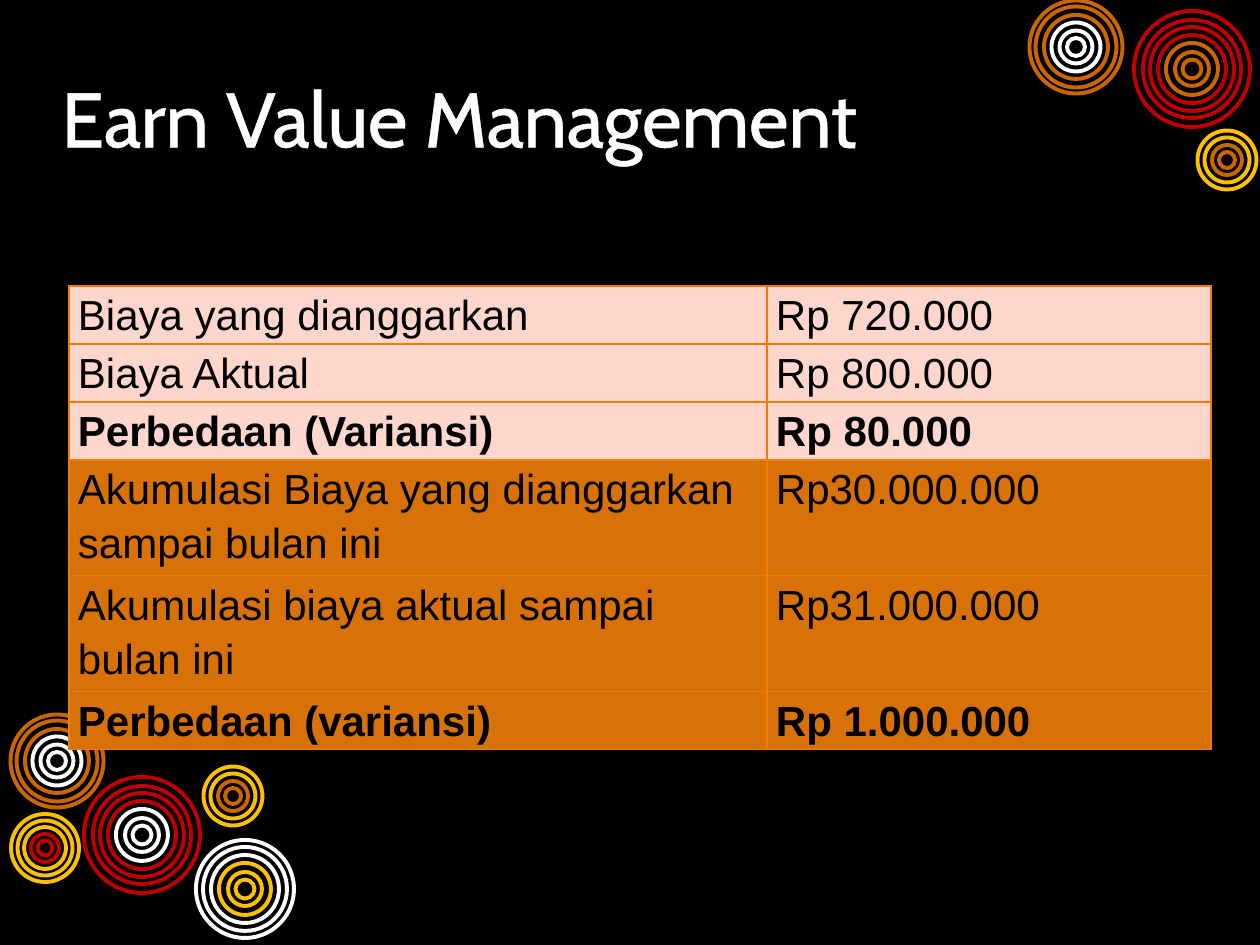
"""Build the Earn Value Management slide with its cost table and ring motifs."""
from lxml import etree
from pptx import Presentation
from pptx import util as u
from pptx.dml.color import RGBColor
from pptx.enum import shapes, text
from pptx.oxml.ns import qn

theme = {
    "black": "000000", "white": "FFFFFF", "red": "C00000", "rust": "CC6600",
    "gold": "FFC000", "pink": "FFD6CC", "amber": "D87208", "edge": "F07C03",
    "head": 44, "body": 24, "ring": 2.25, "display": "Cabin", "sans": "Arial",
}


def px(n):
    return u.Emu(round(n * 914400 / 126))


def hue(name):
    return RGBColor.from_string(theme[name])


def stroke(tag, name, width):
    line = etree.Element(qn(tag), w=str(u.Pt(width)))
    fill = etree.SubElement(line, qn("a:solidFill"))
    etree.SubElement(fill, qn("a:srgbClr"), val=theme[name])
    return line


deck = Presentation()
deck.slide_width, deck.slide_height = px(1260), px(945)
slide = deck.slides.add_slide(deck.slide_layouts[6])
slide.background.fill.solid()
slide.background.fill.fore_color.rgb = hue("black")

wide = [98, 84, 68, 52, 34, 19]
mid = [93, 81, 64, 49, 33, 18]
small = [68, 55, 42, 28, 15]
tiny = [59, 45, 30, 16]
motifs = [
    (142, 835, [116] + wide, 4, "red", "white"),
    (57, 761, mid, 3, "rust", "white"),
    (45, 848, small, 3, "gold", "red"),
    (233, 796, tiny, 2, "gold", "rust"),
    (245, 889, wide, 3, "white", "gold"),
    (1076, 47, mid, 3, "rust", "white"),
    (1227, 160, tiny, 2, "gold", "rust"),
    (1192, 69, [116] + wide, 4, "red", "rust"),
]
for x, y, sizes, split, outer, inner in motifs:
    group = slide.shapes.add_group_shape()
    for i, size in enumerate(sizes + [5]):
        ring = group.shapes.add_shape(
            shapes.MSO_SHAPE.OVAL, px(x - size / 2), px(y - size / 2), px(size), px(size))
        ring.shadow.inherit = False
        ring.line.width = u.Pt(theme["ring"])
        if i < len(sizes):
            ring.fill.background()
            ring.line.color.rgb = hue(outer if i < split else inner)
        else:
            ring.fill.solid()
            ring.fill.fore_color.rgb = hue(inner)
            ring.line.color.rgb = hue("black")

title = slide.shapes.add_textbox(px(49), px(49), px(1134), px(135))
frame = title.text_frame
frame.word_wrap = True
frame.vertical_anchor = text.MSO_ANCHOR.MIDDLE
para = frame.paragraphs[0]
run = para.add_run()
run.text = "Earn Value Management"
para.font.name, para.font.size = theme["display"], u.Pt(theme["head"])
para.font.color.rgb = hue("white")
run._r.get_or_add_rPr().insert(0, stroke("a:ln", "white", 1.45))

rows = [
    ("Biaya yang dianggarkan", "Rp 720.000", 54, "pink", False),
    ("Biaya Aktual", "Rp 800.000", 54, "pink", False),
    ("Perbedaan (Variansi)", "Rp 80.000", 54, "pink", True),
    ("Akumulasi Biaya yang dianggarkan sampai bulan ini", "Rp30.000.000", 107, "amber", False),
    ("Akumulasi biaya aktual sampai bulan ini", "Rp31.000.000", 107, "amber", False),
    ("Perbedaan (variansi)", "Rp 1.000.000", 54, "amber", True),
]
high = sum(row[2] for row in rows)
table = slide.shapes.add_table(len(rows), 2, px(69), px(286), px(1142), px(high)).table
table.first_row = table.horz_banding = False
for col, width in zip(table.columns, (698, 444)):
    col.width = px(width)
for r, (label, cost, tall, fill, bold) in enumerate(rows):
    table.rows[r].height = px(tall)
    for c, words in enumerate((label, cost)):
        cell = table.cell(r, c)
        cell.margin_left = cell.margin_right = px(9)
        cell.margin_top = cell.margin_bottom = 0
        cell.fill.solid()
        cell.fill.fore_color.rgb = hue(fill)
        cell.text = words
        para = cell.text_frame.paragraphs[0]
        para.line_spacing = 1.15
        para.font.name, para.font.size = theme["sans"], u.Pt(theme["body"])
        para.font.bold = bold
        para.font.color.rgb = hue("black")
        for i, side in enumerate("LRTB"):
            cell._tc.get_or_add_tcPr().insert(i, stroke("a:ln" + side, "edge", 0.75))

deck.save("out.pptx")
